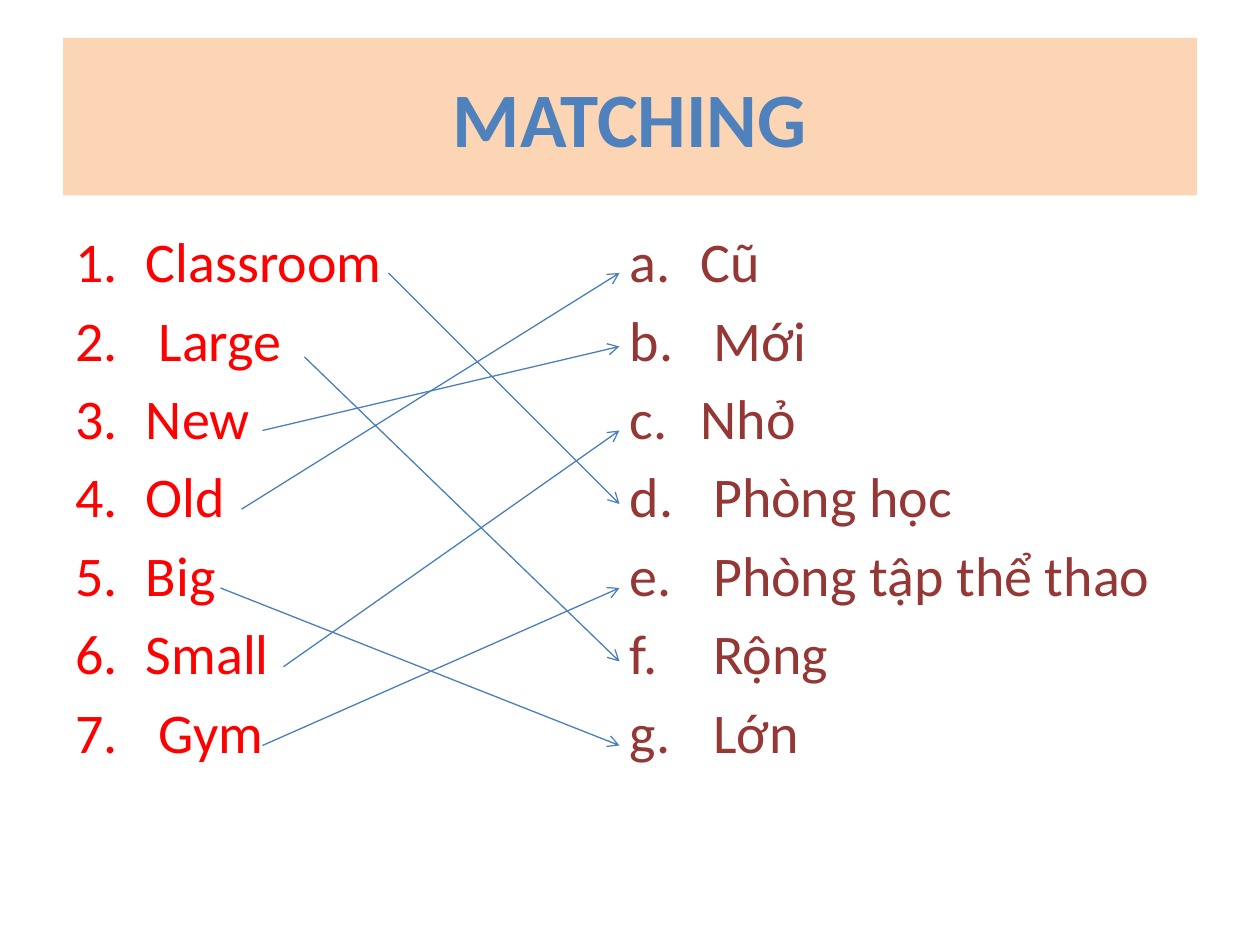
import pptx
import pptx.util
import pptx.dml.color
import pptx.enum.shapes
import pptx.enum.text
import pptx.oxml
import pptx.oxml.ns
from lxml import etree

PEACH = pptx.dml.color.RGBColor(0xFC, 0xD5, 0xB5)
BLUE = pptx.dml.color.RGBColor(0x4F, 0x81, 0xBD)
LINE_BLUE = pptx.dml.color.RGBColor(0x4B, 0x7E, 0xBC)
RED = pptx.dml.color.RGBColor(0xFF, 0x00, 0x00)
MAROON = pptx.dml.color.RGBColor(0x95, 0x37, 0x35)

ENGLISH = ["Classroom", " Large", "New", "Old", "Big", "Small", " Gym"]
VIETNAMESE = ["Cũ", " Mới", "Nhỏ", " Phòng học", " Phòng tập thể thao", " Rộng", " Lớn"]
ARROW_END = 118
ARROWS = [(74, 52, 96), (58, 68, 126), (50, 82, 66), (46, 97, 52),
          (42, 112, 142), (54, 127, 82), (50, 142, 112)]


def add_child(parent, tag, **attrs):
    return etree.SubElement(parent, pptx.oxml.ns.qn(tag), attrs)


def format_run(r, size, color):
    r.font.name = "Calibri"
    r.font.size = pptx.util.Pt(size)
    r.font.color.rgb = color


prs = pptx.Presentation()
prs.slide_width = pptx.util.Inches(10)
prs.slide_height = pptx.util.Inches(7.5)
W, H = prs.slide_width, prs.slide_height
unit = W // 240
s = prs.slides.add_slide(prs.slide_layouts[5])

title = s.shapes.title
title.left, title.top = int(W * 0.05), int(H * 0.04)
title.width, title.height = int(W * 0.9), 30 * unit
title.fill.solid()
title.fill.fore_color.rgb = PEACH
title.text_frame.text = "MATCHING"
title.text_frame.vertical_anchor = pptx.enum.text.MSO_ANCHOR.MIDDLE
p = title.text_frame.paragraphs[0]
p.alignment = pptx.enum.text.PP_ALIGN.CENTER
format_run(p.runs[0], 44, BLUE)
p.runs[0].font.bold = True

sp = s.shapes.add_textbox(int(W * 0.05), 42 * unit, int(W * 0.9), int(H * 0.66))
tf = sp.text_frame
tf.word_wrap = True
tf.text = "\n".join(ENGLISH + VIETNAMESE)
sp.element.txBody.find(pptx.oxml.ns.qn("a:bodyPr")).set("numCol", "2")
indent = pptx.util.Inches(0.56)
for i, p in enumerate(tf.paragraphs):
    english = i < len(ENGLISH)
    p.space_before = pptx.util.Pt(6.4)
    format_run(p.runs[0], 32, RED if english else MAROON)
    pPr = p._p.get_or_add_pPr()
    pPr.set("marL", str(indent))
    pPr.set("indent", str(-indent))
    add_child(pPr, "a:buFont", typeface="+mj-lt")
    add_child(pPr, "a:buAutoNum", type="arabicPeriod" if english else "alphaLcPeriod")

for x, y, end_y in ARROWS:
    line = s.shapes.add_connector(pptx.enum.shapes.MSO_CONNECTOR.STRAIGHT,
                                  x * unit, y * unit, ARROW_END * unit, end_y * unit)
    line.line.color.rgb = LINE_BLUE
    line.line.width = pptx.util.Pt(0.75)
    add_child(line.line._get_or_add_ln(), "a:tailEnd", type="arrow")
    add_child(line.element.spPr, "a:effectLst")

prs.save("out.pptx")
